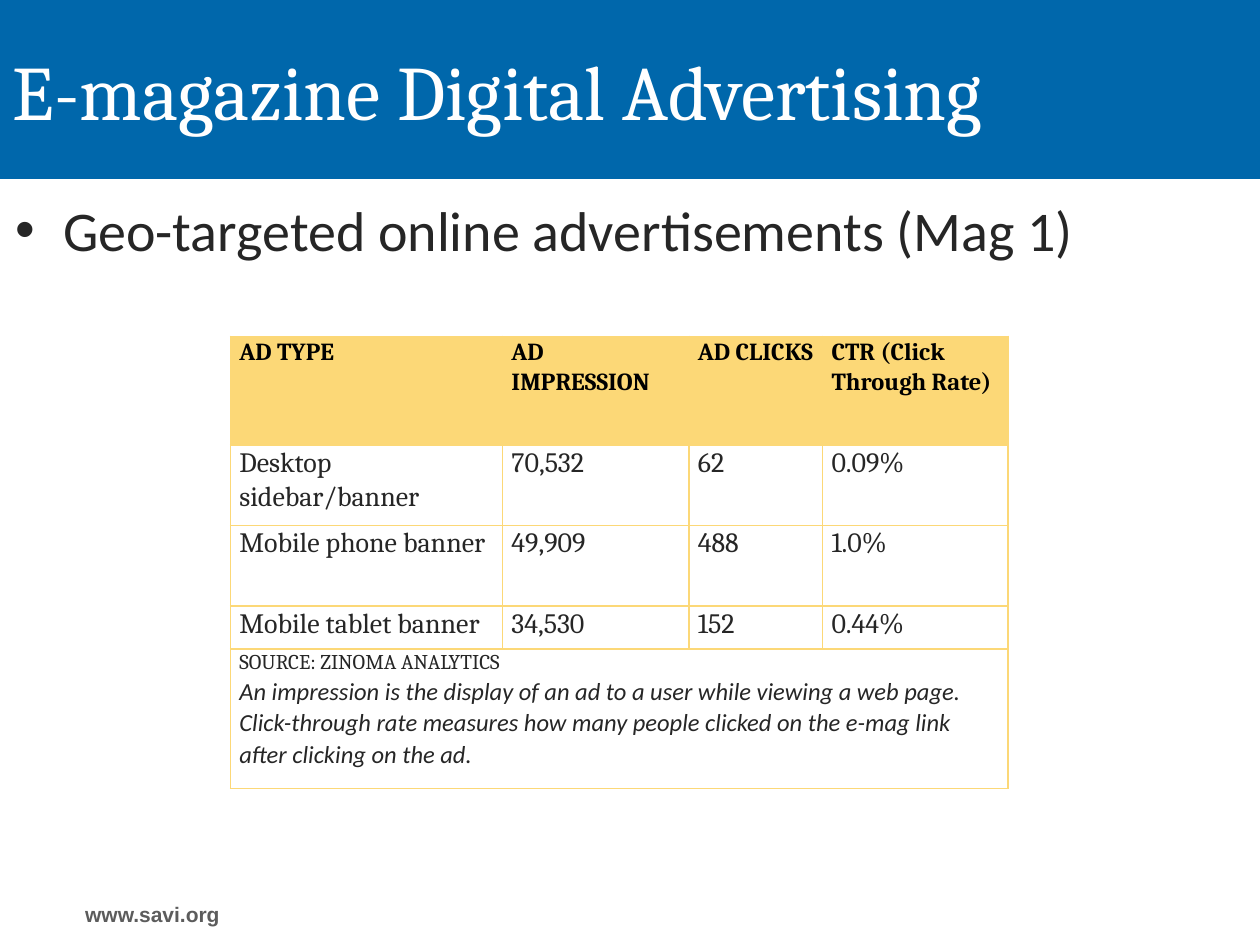
"""Build the e-magazine digital advertising slide."""
from dataclasses import dataclass

import pptx
import pptx.dml.color
import pptx.enum.shapes
import pptx.enum.text
import pptx.oxml
import pptx.oxml.ns
import pptx.util
from pptx.util import Inches

BLUE, GOLD, WHITE, BLACK, INK, GREY = "0067AB", "FCD877", "FFFFFF", "000000", "262626", "5C5C5C"
COLUMN_WIDTHS = (2.16, 1.48, 1.06, 1.47)
ROW_HEIGHTS = (0.86, 0.64, 0.64, 0.34, 1.11)
HEADINGS = ("AD TYPE", "AD IMPRESSION", "AD CLICKS", "CTR (Click Through Rate)")


@dataclass(frozen=True)
class AdResult:
    ad_type: str
    impressions: str
    clicks: str
    rate: str

    def values(self) -> tuple[str, ...]:
        return self.ad_type, self.impressions, self.clicks, self.rate


RESULTS = (
    AdResult("Desktop sidebar/banner", "70,532", "62", "0.09%"),
    AdResult("Mobile phone banner", "49,909", "488", "1.0%"),
    AdResult("Mobile tablet banner", "34,530", "152", "0.44%"),
)
DEFINITIONS = (
    "An impression is the display of an ad to a user while viewing a web page.",
    "Click-through rate measures how many people clicked on the e-mag link after clicking on the ad.",
)


def rgb(color: str) -> pptx.dml.color.RGBColor:
    return pptx.dml.color.RGBColor.from_string(color)


def write(paragraph, text: str, *, size: float, font: str = "Cambria", color: str = INK,
          bold: bool = False, italic: bool = False, align: str = "LEFT", spacing: float = 1.0) -> None:
    run = paragraph.add_run()
    run.text = text
    run.font.size = pptx.util.Pt(size)
    run.font.name = font
    run.font.bold = bold
    run.font.italic = italic
    run.font.color.rgb = rgb(color)
    paragraph.alignment = getattr(pptx.enum.text.PP_ALIGN, align)
    paragraph.line_spacing = spacing
    paragraph.space_before = pptx.util.Pt(0)


def place(shape, left: float, top: float, width: float, height: float) -> None:
    shape.left, shape.top = Inches(left), Inches(top)
    shape.width, shape.height = Inches(width), Inches(height)


def style_cell(cell, fill: str) -> None:
    cell.margin_left = cell.margin_right = Inches(0.07)
    cell.margin_top = cell.margin_bottom = 0
    properties = cell._tc.get_or_add_tcPr()
    for side in ("lnL", "lnR", "lnT", "lnB"):
        properties.append(pptx.oxml.parse_xml(
            f'<a:{side} {pptx.oxml.ns.nsdecls("a")} w="12700"><a:solidFill>'
            f'<a:srgbClr val="{GOLD}"/></a:solidFill></a:{side}>'))
    cell.fill.solid()
    cell.fill.fore_color.rgb = rgb(fill)


def add_heading(slide) -> None:
    title = slide.shapes.title
    place(title, 0, 0, 9.67, 1.42)
    title.text_frame.vertical_anchor = pptx.enum.text.MSO_ANCHOR.MIDDLE
    write(title.text_frame.paragraphs[0], "E-magazine Digital Advertising", size=44, color=WHITE)

    band = slide.shapes.add_shape(pptx.enum.shapes.MSO_SHAPE.RECTANGLE, 0, 0, Inches(10), Inches(1.42))
    band.shadow.inherit = False
    band.fill.solid()
    band.fill.fore_color.rgb = rgb(BLUE)
    band.line.fill.background()
    title.element.addprevious(band.element)


def add_topic(slide) -> None:
    body = slide.placeholders[1]
    place(body, 0.02, 1.5, 8.75, 3.58)
    body.text_frame.auto_size = pptx.enum.text.MSO_AUTO_SIZE.NONE
    topic = body.text_frame.paragraphs[0]
    properties = topic._p.get_or_add_pPr()
    properties.set("marL", str(Inches(0.38)))
    properties.set("indent", str(Inches(-0.38)))
    properties.append(pptx.oxml.parse_xml(f'<a:buChar {pptx.oxml.ns.nsdecls("a")} char="•"/>'))
    write(topic, "Geo-targeted online advertisements (Mag 1)", size=32, font="Calibri")


def add_results(slide) -> None:
    results = slide.shapes.add_table(
        len(ROW_HEIGHTS), len(COLUMN_WIDTHS), Inches(1.83), Inches(2.67),
        Inches(sum(COLUMN_WIDTHS)), Inches(sum(ROW_HEIGHTS))).table
    for column, width in zip(results.columns, COLUMN_WIDTHS):
        column.width = Inches(width)
    for row, height in zip(results.rows, ROW_HEIGHTS):
        row.height = Inches(height)
    for index, row in enumerate(results.rows):
        for cell in row.cells:
            style_cell(cell, WHITE if index else GOLD)

    for cell, heading in zip(results.rows[0].cells, HEADINGS):
        write(cell.text_frame.paragraphs[0], heading, size=14, color=BLACK, bold=True, spacing=1.07)
    for index, result in enumerate(RESULTS, start=1):
        for cell, value in zip(results.rows[index].cells, result.values()):
            write(cell.text_frame.paragraphs[0], value, size=16, spacing=1.07)

    last = len(ROW_HEIGHTS) - 1
    source = results.cell(last, 0)
    source.merge(results.cell(last, len(COLUMN_WIDTHS) - 1))
    write(source.text_frame.paragraphs[0], "SOURCE: ZINOMA ANALYTICS", size=12, spacing=1.07)
    for definition in DEFINITIONS:
        write(source.text_frame.add_paragraph(), definition, size=14, font="Calibri",
              italic=True, spacing=1.07)


def add_website(slide) -> None:
    website = slide.shapes.add_textbox(Inches(0.17), Inches(7.11), Inches(2.08), Inches(0.3)).text_frame
    website.word_wrap = True
    website.auto_size = pptx.enum.text.MSO_AUTO_SIZE.SHAPE_TO_FIT_TEXT
    write(website.paragraphs[0], "www.savi.org", size=12, font="Arial", color=GREY, bold=True, align="CENTER")


def main() -> None:
    deck = pptx.Presentation()
    deck.slide_width, deck.slide_height = Inches(10), Inches(7.5)
    slide = deck.slides.add_slide(deck.slide_layouts[1])
    add_heading(slide)
    add_topic(slide)
    add_results(slide)
    add_website(slide)
    deck.save("out.pptx")


if __name__ == "__main__":
    main()
